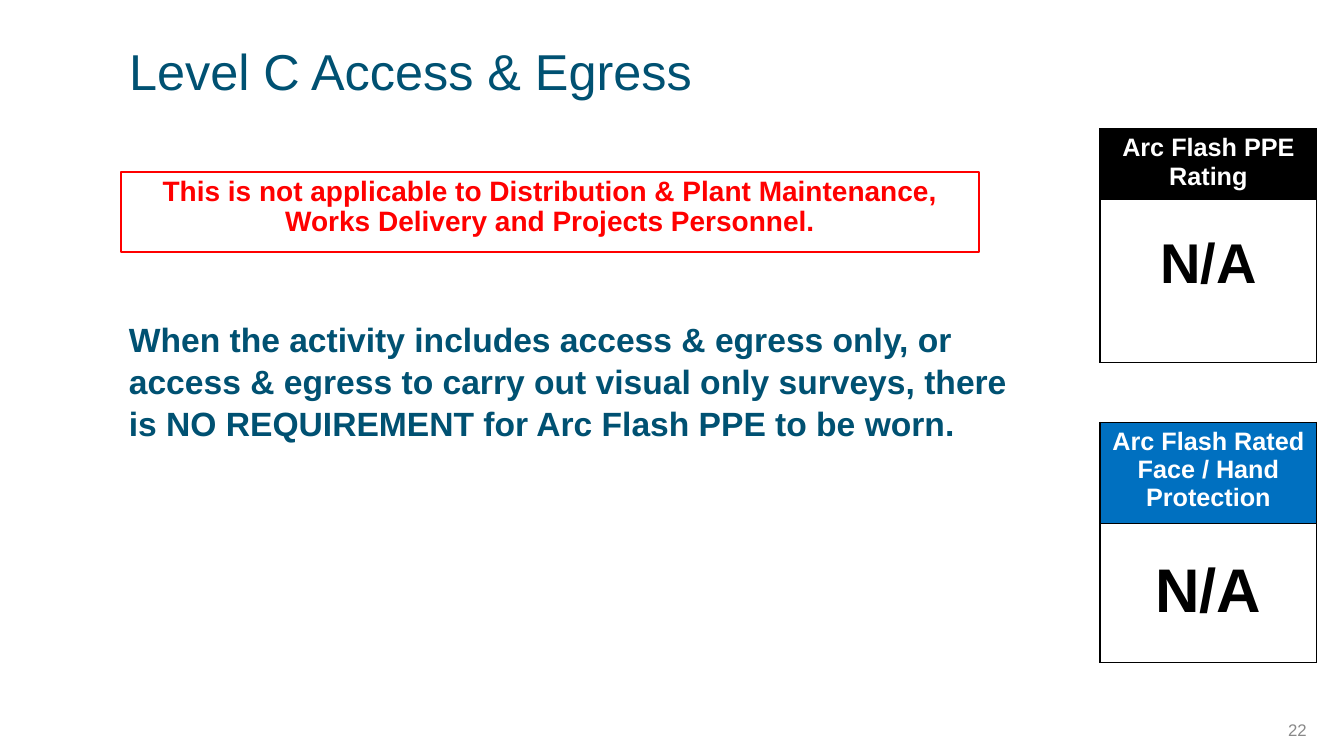
from lxml.etree import SubElement
from pptx import Presentation
from pptx.dml.color import RGBColor
from pptx.enum.shapes import MSO_SHAPE
from pptx.enum.text import MSO_ANCHOR, PP_ALIGN
from pptx.oxml.ns import qn
from pptx.util import Inches, Pt

COLOURS = {
    "teal": "005172",
    "red": "FF0000",
    "black": "000000",
    "white": "FFFFFF",
    "blue": "0070C0",
    "grey": "898989",
}
FONT = "Arial"
TITLE = "Level C Access & Egress"
WARNING = (
    "This is not applicable to Distribution & Plant Maintenance, "
    "Works Delivery and Projects Personnel."
)
STATEMENT = (
    "When the activity includes access & egress only, or access & egress to carry out "
    "visual only surveys, there is NO REQUIREMENT for Arc Flash PPE to be worn."
)
PAGE_NUMBER = "22"
RATINGS = [
    {"heading": "Arc Flash PPE Rating", "value": "N/A", "fill": "black",
     "size": 40, "top": 1.28, "rows": (0.66, 1.62)},
    {"heading": "Arc Flash Rated Face / Hand Protection", "value": "N/A", "fill": "blue",
     "size": 44, "top": 4.19, "rows": (0.94, 1.38)},
]
WIDTH, HEIGHT = 13.33, 7.5
LEFT = 1.2
RATING_LEFT, RATING_WIDTH = 10.91, 2.15
VALUE_DROP = 0.33


def colour(name):
    return RGBColor.from_string(COLOURS[name])


def write(frame, text, size, name, bold=False, align=PP_ALIGN.LEFT, spacing=None):
    frame.text = text
    para = frame.paragraphs[0]
    para.alignment = align
    if spacing:
        para.line_spacing = spacing
    for span in para.runs:
        span.font.name = FONT
        span.font.size = Pt(size)
        span.font.bold = bold
        span.font.color.rgb = colour(name)


def add_text(page, place, text, size, name, **style):
    box = page.shapes.add_textbox(*map(Inches, place))
    box.text_frame.word_wrap = True
    write(box.text_frame, text, size, name, **style)
    return box.text_frame


def add_borders(cell):
    properties = cell._tc.get_or_add_tcPr()
    for position, side in enumerate(("a:lnL", "a:lnR", "a:lnT", "a:lnB")):
        line = properties.makeelement(qn(side), {"w": str(Pt(1))})
        fill = SubElement(line, qn("a:solidFill"))
        SubElement(fill, qn("a:srgbClr"), val=COLOURS["black"])
        properties.insert(position, line)


def add_rating(page, rating):
    place = (RATING_LEFT, rating["top"], RATING_WIDTH, sum(rating["rows"]))
    table = page.shapes.add_table(2, 1, *map(Inches, place)).table
    for row, height in zip(table.rows, rating["rows"]):
        row.height = Inches(height)
    heading, value = table.cell(0, 0), table.cell(1, 0)
    write(heading.text_frame, rating["heading"], 18, "white", bold=True, align=PP_ALIGN.CENTER)
    write(value.text_frame, rating["value"], rating["size"], "black", bold=True,
          align=PP_ALIGN.CENTER)
    value.margin_top = Inches(VALUE_DROP)
    for cell, fill in ((heading, rating["fill"]), (value, "white")):
        cell.fill.solid()
        cell.fill.fore_color.rgb = colour(fill)
        add_borders(cell)


def add_warning(page):
    box = page.shapes.add_shape(MSO_SHAPE.RECTANGLE, *map(Inches, (LEFT, 1.71, 8.51, 0.79)))
    box.shadow.inherit = False
    box.fill.background()
    box.line.color.rgb = colour("red")
    box.line.width = Pt(1.5)
    box.text_frame.word_wrap = True
    box.text_frame.vertical_anchor = MSO_ANCHOR.TOP
    write(box.text_frame, WARNING, 20, "red", bold=True, align=PP_ALIGN.CENTER, spacing=0.9)


def main():
    deck = Presentation()
    deck.slide_width, deck.slide_height = Inches(WIDTH), Inches(HEIGHT)
    page = deck.slides.add_slide(deck.slide_layouts[6])

    title = add_text(page, (LEFT, 0.39, 10.6, 0.47), TITLE, 36, "teal", spacing=0.9)
    title.margin_left = title.margin_top = Inches(0.08)
    add_warning(page)
    add_text(page, (1.18, 3.09, 9.03, 1.31), STATEMENT, 24, "teal", bold=True, spacing=1.05)
    for rating in RATINGS:
        add_rating(page, rating)
    number = add_text(page, (12.13, 7.14, 0.93, 0.2), PAGE_NUMBER, 12, "grey",
                      align=PP_ALIGN.RIGHT)
    number.margin_top = number.margin_bottom = 0
    number.vertical_anchor = MSO_ANCHOR.MIDDLE

    deck.save("out.pptx")


if __name__ == "__main__":
    main()
